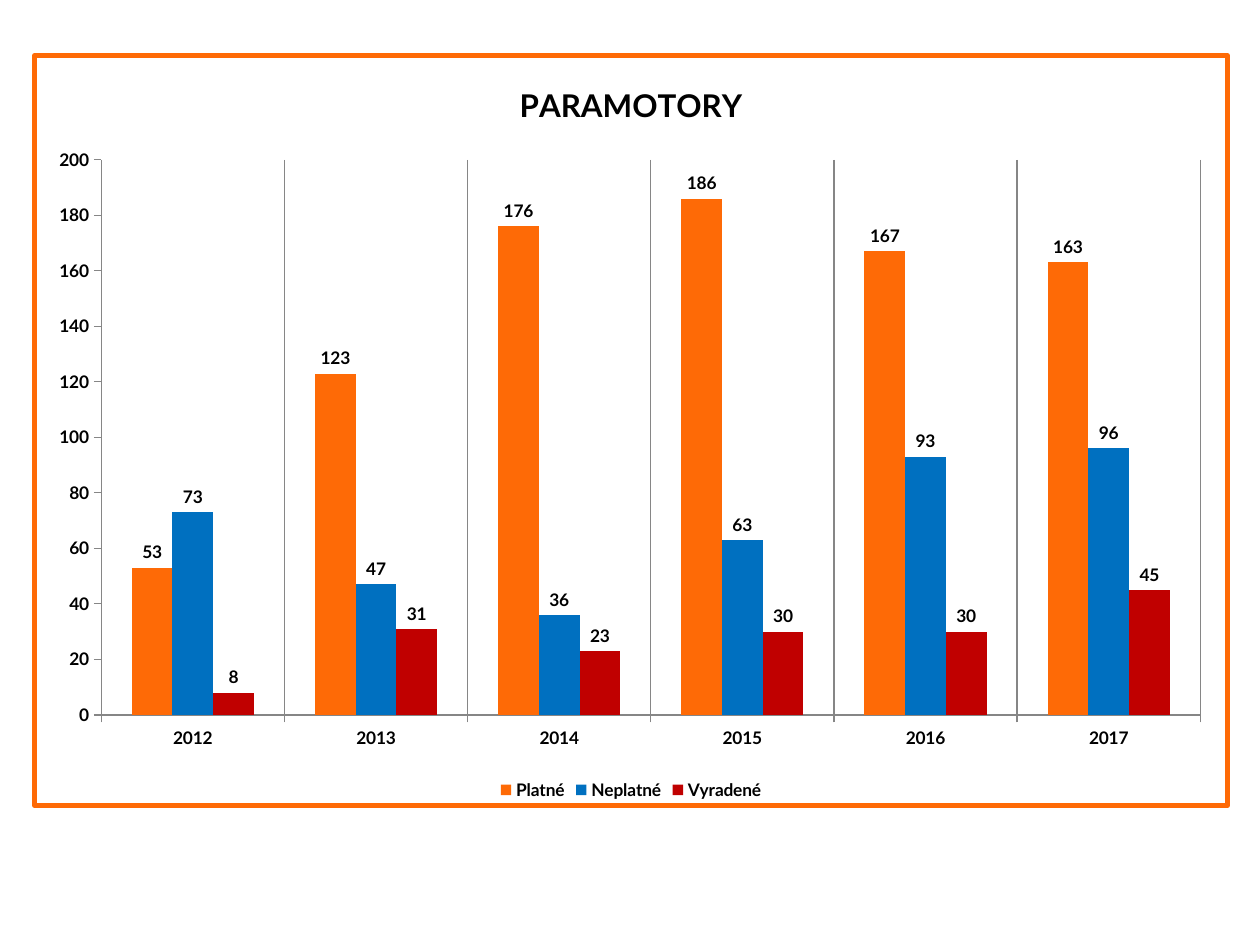
from lxml import etree
from pptx import Presentation
from pptx.chart.data import CategoryChartData
from pptx.dml.color import RGBColor
from pptx.enum.chart import XL_CHART_TYPE as ChartType
from pptx.enum.chart import XL_LABEL_POSITION as LabelPosition
from pptx.enum.chart import XL_LEGEND_POSITION as LegendPosition
from pptx.enum.chart import XL_TICK_MARK as TickMark
from pptx.oxml import parse_xml
from pptx.util import Pt

PX = 914400 // 126
SLIDE = (1260, 945)
CHART = (32, 53, 1198, 755)
PLOT = (99, 158, 1104, 559)
FONT = "Lato"
BLACK, GREY, ORANGE = "000000", "868686", "FE6A06"
NS = (
    'xmlns:c="http://schemas.openxmlformats.org/drawingml/2006/chart" '
    'xmlns:a="http://schemas.openxmlformats.org/drawingml/2006/main"'
)

TITLE = "PARAMOTORY"
YEARS = ["2012", "2013", "2014", "2015", "2016", "2017"]
SERIES = [
    ("Platné", ORANGE, [53, 123, 176, 186, 167, 163]),
    ("Neplatné", "0070C0", [73, 47, 36, 63, 93, 96]),
    ("Vyradené", "C00000", [8, 31, 23, 30, 30, 45]),
]


def color(value):
    return RGBColor.from_string(value)


def style_font(font, size=10):
    font.name = FONT
    font.size = Pt(size)
    font.bold = True
    font.color.rgb = color(BLACK)


def style_line(line):
    line.color.rgb = color(GREY)
    line.width = Pt(0.75)


def style_axis(axis, gridlines):
    axis.has_major_gridlines = gridlines
    if gridlines:
        style_line(axis.major_gridlines.format.line)
    axis.major_tick_mark = TickMark.OUTSIDE
    axis.minor_tick_mark = TickMark.NONE
    style_line(axis.format.line)
    style_font(axis.tick_labels.font)


def add_border(chart, border_color, width):
    border = parse_xml(
        f'<c:spPr {NS}><a:solidFill><a:srgbClr val="FFFFFF"/></a:solidFill>'
        f'<a:ln w="{Pt(width)}"><a:solidFill><a:srgbClr val="{border_color}"/>'
        "</a:solidFill><a:round/></a:ln></c:spPr>"
    )
    chart.element.chart.addnext(border)


def place_plot(chart):
    left, top, width, height = CHART
    x, y, w, h = PLOT
    fractions = {
        "x": (x - left) / width,
        "y": (y - top) / height,
        "w": w / width,
        "h": h / height,
    }
    layout = parse_xml(
        f'<c:layout {NS}><c:manualLayout><c:layoutTarget val="inner"/>'
        '<c:xMode val="edge"/><c:yMode val="edge"/></c:manualLayout></c:layout>'
    )
    for name, fraction in fractions.items():
        tag = etree.QName(layout.nsmap["c"], name)
        etree.SubElement(layout[0], tag).set("val", f"{fraction:.4f}")
    plot_area = chart.element.chart.plotArea
    for old_layout in plot_area.findall("c:layout", layout.nsmap):
        plot_area.remove(old_layout)
    plot_area.insert(0, layout)


def add_chart(slide):
    chart_data = CategoryChartData()
    chart_data.categories = YEARS
    for name, _, values in SERIES:
        chart_data.add_series(name, values)
    place = [length * PX for length in CHART]
    chart = slide.shapes.add_chart(
        ChartType.COLUMN_CLUSTERED, *place, chart_data
    ).chart
    style_font(chart.font)

    chart.has_title = True
    heading = chart.chart_title.text_frame
    heading.text = TITLE
    style_font(heading.paragraphs[0].font, 18)
    chart.chart_title.include_in_layout = False

    chart.has_legend = True
    chart.legend.position = LegendPosition.BOTTOM
    chart.legend.include_in_layout = False
    style_font(chart.legend.font)

    style_axis(chart.category_axis, gridlines=True)
    style_axis(chart.value_axis, gridlines=False)
    chart.value_axis.minimum_scale = 0
    chart.value_axis.maximum_scale = 200
    chart.value_axis.major_unit = 20

    columns = chart.plots[0]
    columns.gap_width = 150
    columns.overlap = 0
    columns.vary_by_categories = False
    for series, (_, fill_color, _) in zip(columns.series, SERIES):
        series.format.fill.solid()
        series.format.fill.fore_color.rgb = color(fill_color)
        labels = series.data_labels
        labels.show_value = True
        labels.position = LabelPosition.OUTSIDE_END
        style_font(labels.font)

    add_border(chart, ORANGE, 3)
    place_plot(chart)


def main():
    deck = Presentation()
    deck.slide_width, deck.slide_height = [length * PX for length in SLIDE]
    blank_layout = deck.slide_layouts[6]
    add_chart(deck.slides.add_slide(blank_layout))
    deck.save("out.pptx")


if __name__ == "__main__":
    main()
